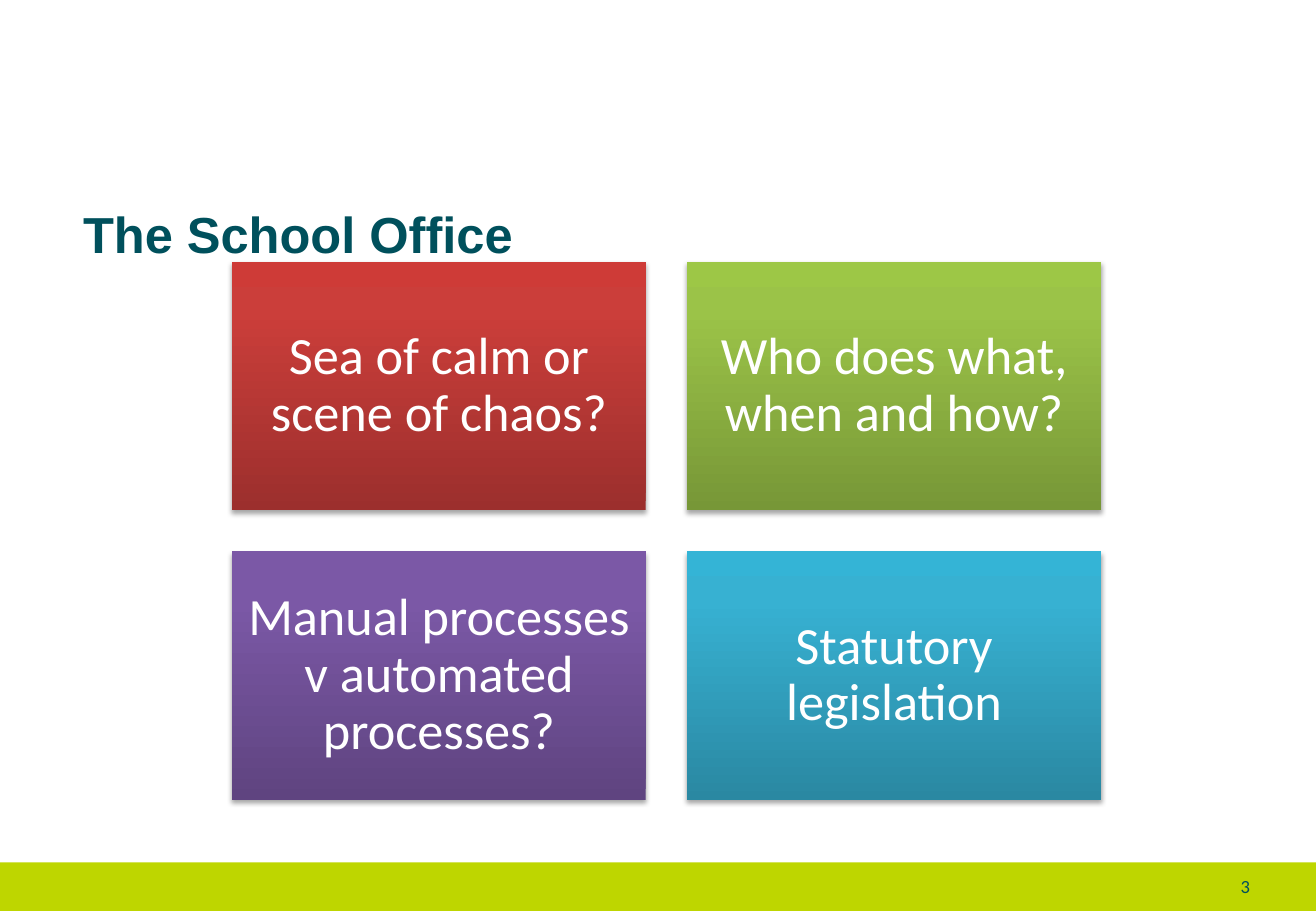
from pptx import Presentation
from pptx import util as u
from pptx.dml.color import RGBColor
from pptx.enum import shapes, text
from pptx.oxml import parse_xml
from pptx.oxml.ns import nsdecls

Pt = u.Pt
COLORS = {"teal": "00505C", "lime": "BED600", "white": "FFFFFF",
          "grey": "808080", "black": "000000"}
GRADIENTS = {  # bottom, near the top, top
    "red": ("9C2F2D", "CB3E3A", "CE3B37"),
    "green": ("779737", "9BC348", "9DC746"),
    "purple": ("5F4480", "7B58A6", "7C57A8"),
    "blue": ("2A88A2", "37B1D2", "34B4D6"),
}
CARDS = [
    ("Sea of calm or scene of chaos?", "red"),
    ("Who does what, when and how?", "green"),
    ("Manual processes v automated processes?", "purple"),
    ("Statutory legislation", "blue"),
]


def style_text(p, size, color, font, bold=False):
    f = p.runs[0].font
    f.name, f.size, f.bold = font, Pt(size), bold
    f.color.rgb = RGBColor.from_string(COLORS[color])


def add_box(s, x, y, w, h):
    sp = s.shapes.add_shape(shapes.MSO_SHAPE.RECTANGLE, Pt(x), Pt(y), Pt(w), Pt(h))
    sp.line.fill.background()
    return sp


def set_shadow(sp, color, blur):
    """Soft shadow falling straight down; goes after fill and line."""
    sp.shadow.inherit = False
    effects = sp.element.spPr.find("{*}effectLst")
    effects.append(parse_xml(
        f'<a:outerShdw {nsdecls("a")} blurRad="{Pt(blur)}" dist="{Pt(1.8)}" '
        f'dir="5400000" rotWithShape="0"><a:srgbClr val="{COLORS[color]}">'
        '<a:alpha val="35000"/></a:srgbClr></a:outerShdw>'))


def set_gradient(sp, colors):
    stops = "".join(f'<a:gs pos="{pos}"><a:srgbClr val="{c}"/></a:gs>'
                    for pos, c in zip((0, 80000, 100000), colors))
    grad = parse_xml(f'<a:gradFill {nsdecls("a")} rotWithShape="1"><a:gsLst>{stops}'
                     '</a:gsLst><a:lin ang="16200000" scaled="0"/></a:gradFill>')
    sp.element.spPr.find("{*}prstGeom").addnext(grad)


def add_title(s, x, y, w, h):
    sp = s.shapes.title
    sp.left, sp.top, sp.width, sp.height = Pt(x), Pt(y), Pt(w), Pt(h)
    tf = sp.text_frame
    tf.text = "The School Office"
    tf.auto_size = text.MSO_AUTO_SIZE.NONE
    tf.vertical_anchor = text.MSO_ANCHOR.TOP
    tf.margin_top, tf.margin_bottom = Pt(2.8), Pt(0)
    p = tf.paragraphs[0]
    p.alignment = text.PP_ALIGN.LEFT
    style_text(p, 30, "teal", "Arial", bold=True)


def add_footer(s, x, y, w, h):
    # Band
    sp = add_box(s, x, y, w, h)
    sp.fill.solid()
    sp.fill.fore_color.rgb = RGBColor.from_string(COLORS["lime"])
    set_shadow(sp, "grey", 0)
    # Slide number
    num_w = 94.3
    num = s.shapes.add_textbox(Pt(x + w - 32 - num_w), Pt(y + 4), Pt(num_w), Pt(24.5))
    tf = num.text_frame
    tf.word_wrap = True
    tf.text = "3"
    p = tf.paragraphs[0]
    p.alignment = text.PP_ALIGN.RIGHT
    style_text(p, 11, "teal", "Calibri")


def add_card(s, x, y, w, h, label, gradient):
    sp = add_box(s, x, y, w, h)
    set_gradient(sp, GRADIENTS[gradient])
    set_shadow(sp, "black", 3.1)
    tf = sp.text_frame
    tf.word_wrap = True
    tf.vertical_anchor = text.MSO_ANCHOR.MIDDLE
    tf.margin_left = tf.margin_right = tf.margin_top = tf.margin_bottom = Pt(9.3)
    tf.text = label
    p = tf.paragraphs[0]
    p.alignment = text.PP_ALIGN.CENTER
    p.line_spacing = 0.9
    style_text(p, 31, "white", "Calibri")


def add_card_grid(s, x, y, w, h, gap=24.5, cols=2):
    rows = len(CARDS) // cols
    card_w = (w - gap * (cols - 1)) / cols
    card_h = (h - gap * (rows - 1)) / rows
    for i, (label, gradient) in enumerate(CARDS):
        row, col = divmod(i, cols)
        add_card(s, x + col * (card_w + gap), y + row * (card_h + gap),
                 card_w, card_h, label, gradient)


def main():
    prs = Presentation()
    prs.slide_width, prs.slide_height = Pt(780), Pt(540)
    s = prs.slides.add_slide(prs.slide_layouts[5])
    add_footer(s, 0, 511.2, 780, 28.8)
    add_title(s, 42, 117.4, 706, 37.4)
    add_card_grid(s, 137.5, 155.2, 515, 318.8)
    prs.save("out.pptx")


if __name__ == "__main__":
    main()
